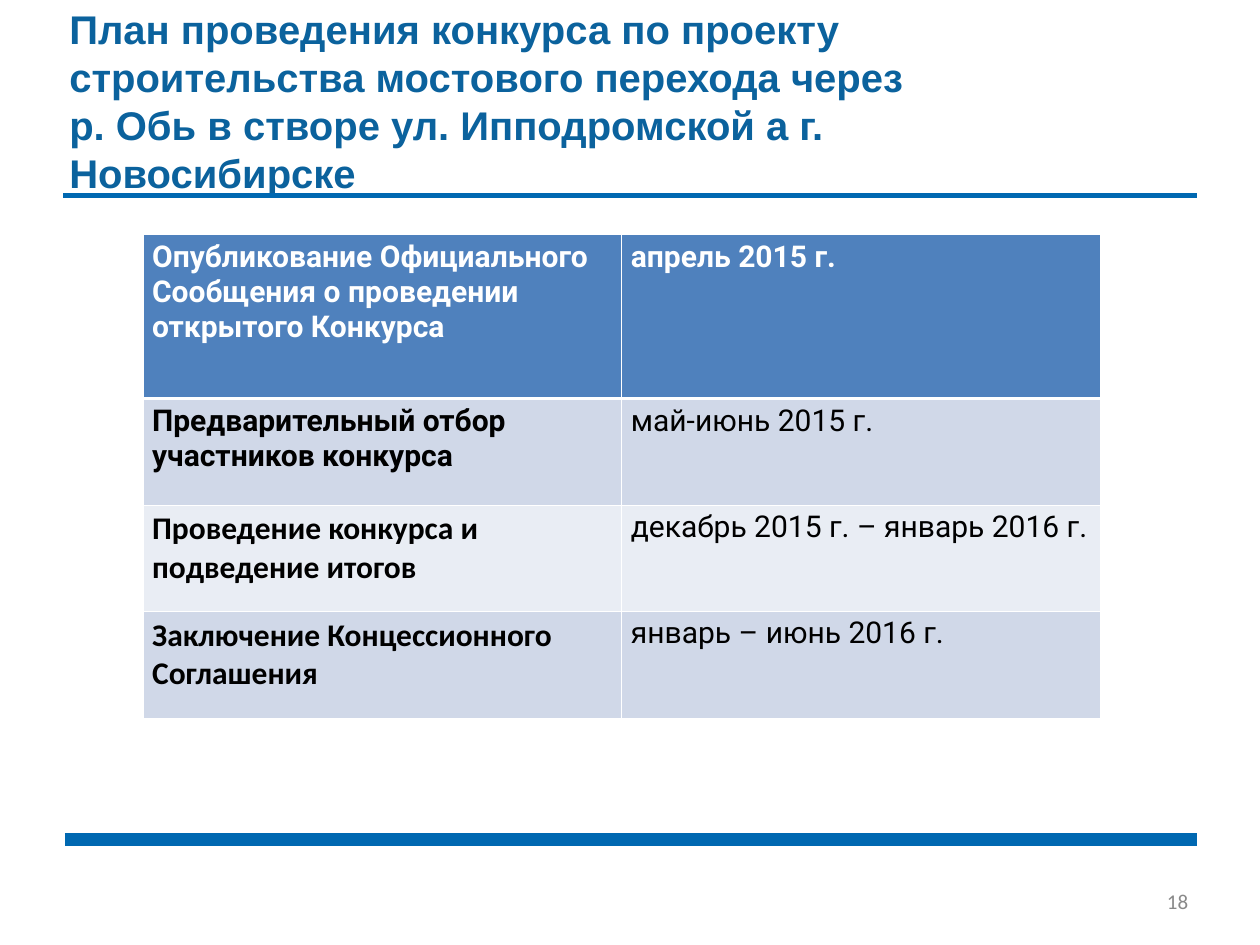
from dataclasses import dataclass
from lxml.etree import SubElement
from pptx import Presentation
from pptx.dml.color import RGBColor
from pptx.enum.shapes import MSO_CONNECTOR
from pptx.enum.text import MSO_ANCHOR, MSO_AUTO_SIZE, PP_ALIGN
from pptx.oxml.ns import qn
from pptx.util import Inches, Pt


@dataclass(frozen=True)
class Theme:
    rule: str = "0068B1"
    title: str = "0B629D"
    head: str = "4F81BD"
    odd: str = "D0D8E8"
    even: str = "E9EDF4"
    white: str = "FFFFFF"
    black: str = "000000"
    gray: str = "898989"
    title_size: float = 32
    step_size: float = 25.2
    cell_size: float = 24
    page_size: float = 16.8


THEME = Theme()
TITLE = [
    "План проведения конкурса по проекту строительства мостового перехода через",
    "р. Обь в створе ул. Ипподромской а г. Новосибирске",
]
PLAN = [
    ("Опубликование Официального Сообщения о проведении открытого Конкурса",
     "апрель 2015 г.", "Roboto", THEME.cell_size),
    ("Предварительный отбор участников конкурса",
     "май-июнь 2015 г.", "Roboto", THEME.cell_size),
    ("Проведение конкурса и подведение итогов",
     "декабрь 2015 г. – январь 2016 г.", "Calibri", THEME.step_size),
    ("Заключение Концессионного Соглашения",
     "январь – июнь 2016 г.", "Calibri", THEME.step_size),
]


def style(para, face, size, color, bold=False):
    for run in para.runs:
        run.font.name = face
        run.font.size = Pt(size)
        run.font.bold = bold
        run.font.color.rgb = RGBColor.from_string(color)


def place(shape, box):
    shape.left, shape.top, shape.width, shape.height = map(Inches, box)


def add_rule(slide, left, right, top, width):
    line = slide.shapes.add_connector(
        MSO_CONNECTOR.STRAIGHT, Inches(left), Inches(top), Inches(right), Inches(top))
    line.line.color.rgb = RGBColor.from_string(THEME.rule)
    line.line.width = Pt(width)
    SubElement(line._element.spPr, qn("a:effectLst"))


def add_title(slide, box):
    title = slide.shapes.title
    place(title, box)
    frame = title.text_frame
    frame.word_wrap = True
    frame.auto_size = MSO_AUTO_SIZE.NONE
    frame.vertical_anchor = MSO_ANCHOR.TOP
    frame.text = "\n".join(TITLE)
    for para in frame.paragraphs:
        para.alignment = PP_ALIGN.LEFT
        para.line_spacing = 1.0
        para.space_before = Pt(0)
        style(para, "Arial", THEME.title_size, THEME.title, True)


def add_edges(cell, widths):
    props = cell._tc.get_or_add_tcPr()
    for spot, (side, width) in enumerate(widths.items()):
        edge = props.makeelement(qn("a:ln" + side), {"w": str(Pt(width))})
        fill = SubElement(edge, qn("a:solidFill"))
        SubElement(fill, qn("a:srgbClr"), val=THEME.white)
        props.insert(spot, edge)


def add_plan(slide, box):
    frame = slide.shapes.add_table(len(PLAN), 2, *map(Inches, box))
    table = frame.table
    table.horz_banding = False
    for col in table.columns:
        col.width = Inches(box[2] / 2)
    head = 1.82
    rest = (box[3] - head) / (len(PLAN) - 1)
    for at, (step, date, face, size) in enumerate(PLAN):
        top = at == 0
        table.rows[at].height = Inches(head if top else rest)
        fill = THEME.head if top else THEME.odd if at % 2 else THEME.even
        ink = THEME.white if top else THEME.black
        looks = [(step, face, size, True), (date, "Roboto", THEME.cell_size, top)]
        for col, (text, font, points, bold) in enumerate(looks):
            cell = table.cell(at, col)
            cell.text_frame.text = text
            style(cell.text_frame.paragraphs[0], font, points, ink, bold)
            cell.fill.solid()
            cell.fill.fore_color.rgb = RGBColor.from_string(fill)
            add_edges(cell, {"L": 1, "R": 1, "T": 3 if at == 1 else 1, "B": 3 if top else 1})


def add_page(slide, box, number):
    frame = slide.shapes.add_textbox(*map(Inches, box)).text_frame
    frame.word_wrap = True
    frame.vertical_anchor = MSO_ANCHOR.MIDDLE
    frame.text = number
    para = frame.paragraphs[0]
    para.alignment = PP_ALIGN.RIGHT
    style(para, "Calibri", THEME.page_size, THEME.gray)


def main():
    deck = Presentation()
    deck.slide_width, deck.slide_height = Inches(14), Inches(10.5)
    slide = deck.slides.add_slide(deck.slide_layouts[5])
    add_rule(slide, 0.72, 13.3, 9.33, 10.5)
    add_rule(slide, 0.7, 13.3, 2.17, 4)
    add_page(slide, (9.65, 9.73, 3.65, 0.56), "18")
    add_plan(slide, (1.59, 2.61, 10.64, 5.37))
    add_title(slide, (0.67, 0, 11.07, 2.26))
    deck.save("out.pptx")


if __name__ == "__main__":
    main()
